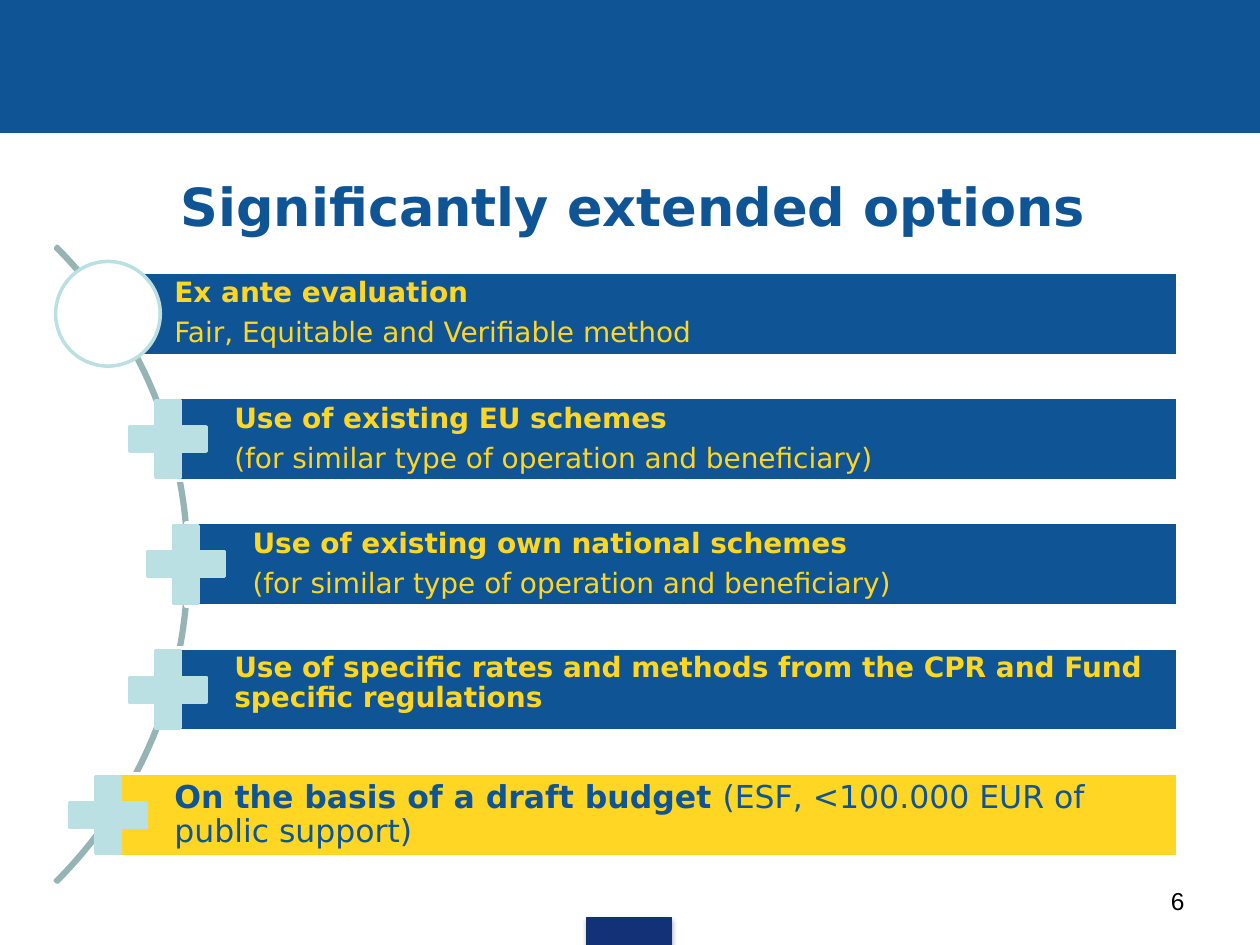
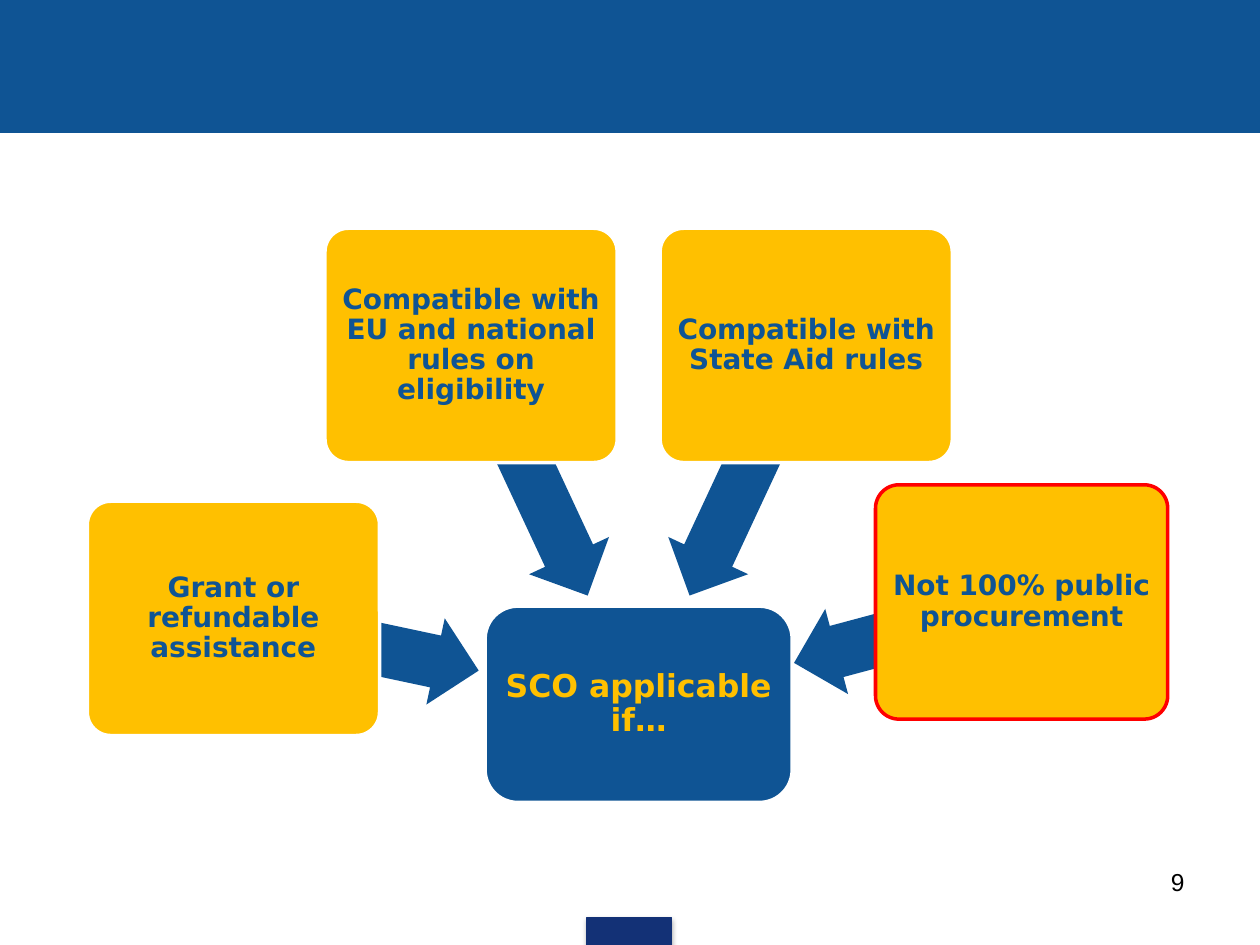
import math
from dataclasses import dataclass

import lxml.etree
import pptx
import pptx.dml.color
import pptx.enum.shapes
import pptx.enum.text
import pptx.oxml.ns
import pptx.util

Pt = pptx.util.Pt
Kind = pptx.enum.shapes.MSO_SHAPE
Align = pptx.enum.text.PP_ALIGN
Anchor = pptx.enum.text.MSO_ANCHOR


@dataclass(frozen=True)
class Theme:
    blue: str = "0F5494"
    navy: str = "133176"
    yellow: str = "FFD624"
    amber: str = "FFC000"
    red: str = "FF0000"
    pale: str = "BBE0E3"
    arc: str = "96B3B6"
    white: str = "FFFFFF"
    black: str = "000000"
    font: str = "DejaVu Sans"
    number_font: str = "Arial"
    title_size: int = 30
    large_size: int = 18
    body_size: int = 16
    number_size: int = 14
    outline: float = 2
    thin_outline: float = 0.75


THEME = Theme()


def rgb(code):
    return pptx.dml.color.RGBColor.from_string(code)


def add_shape(page, kind, bounds, fill=None, line=None, width=THEME.outline,
              adjustments=(), rotation=0):
    shape = page.shapes.add_shape(kind, *map(Pt, bounds))
    shape.shadow.inherit = False
    shape.rotation = rotation
    for index, value in enumerate(adjustments):
        shape.adjustments[index] = value
    if fill:
        shape.fill.solid()
        shape.fill.fore_color.rgb = rgb(fill)
    else:
        shape.fill.background()
    if line:
        shape.line.color.rgb = rgb(line)
        shape.line.width = Pt(width)
    else:
        shape.line.fill.background()
    return shape


def add_drop_shadow(shape):
    tag = pptx.oxml.ns.qn
    effects = shape._element.spPr.find(tag("a:effectLst"))
    shadow = lxml.etree.SubElement(
        effects, tag("a:outerShdw"), blurRad=str(Pt(3.1)), dist=str(Pt(1.8)),
        dir="5400000", rotWithShape="0")
    color = lxml.etree.SubElement(shadow, tag("a:srgbClr"), val=THEME.black)
    lxml.etree.SubElement(color, tag("a:alpha"), val="35000")


def write_text(shape, paragraphs, color, size=THEME.body_size, font=THEME.font,
               align=Align.LEFT, anchor=Anchor.MIDDLE,
               insets=(7.2, 3.6, 7.2, 3.6), tight=False):
    """Fill a shape with paragraphs, each a list of (text, bold) spans."""
    frame = shape.text_frame
    frame.word_wrap = True
    frame.vertical_anchor = anchor
    (frame.margin_left, frame.margin_top,
     frame.margin_right, frame.margin_bottom) = map(Pt, insets)
    for index, spans in enumerate(paragraphs):
        para = frame.add_paragraph() if index else frame.paragraphs[0]
        para.alignment = align
        if tight:
            para.line_spacing = 0.9
            para.space_after = Pt(size * 0.35)
        for text, bold in spans:
            span = para.add_run()
            span.text = text
            span.font.name = font
            span.font.size = Pt(size)
            span.font.bold = bold
            span.font.color.rgb = rgb(color)


def add_text_box(page, bounds, text, color, bold=False, **text_format):
    box = page.shapes.add_textbox(*map(Pt, bounds))
    write_text(box, [[(text, bold)]], color, **text_format)


def add_page(deck, number, number_top):
    """Add a slide with the top band, the bottom tab and the page number."""
    page = deck.slides.add_slide(deck.slide_layouts[6])
    add_shape(page, Kind.RECTANGLE, (0, 0, 720, 75.6), THEME.blue, THEME.blue,
              THEME.thin_outline)
    tab = add_shape(page, Kind.RECTANGLE, (335.5, 524.2, 48.2, 15.8),
                    THEME.navy, THEME.navy, THEME.thin_outline)
    add_drop_shadow(tab)
    add_text_box(page, (516.2, number_top, 167.8, 37.4), number, THEME.black,
                 size=THEME.number_size, font=THEME.number_font,
                 align=Align.RIGHT, anchor=Anchor.TOP)
    return page


def add_option(page, row, left, paragraphs, marker=Kind.MATH_PLUS,
               fill=THEME.blue, color=THEME.yellow, size=THEME.body_size,
               anchor=Anchor.MIDDLE):
    """Add one bar with its marker centred on the bar's left edge."""
    right, height, marker_size = 673.2, 47.6, 59.8
    top = 155.5 + row * 71.6
    bar = add_shape(page, Kind.RECTANGLE, (left, top, right - left, height),
                    fill, THEME.white)
    write_text(bar, paragraphs, color, size=size, anchor=anchor, tight=True,
               insets=(38, 3, 3, 3))
    marker_fill = THEME.white if marker == Kind.OVAL else THEME.pale
    add_shape(page, marker,
              (left - marker_size / 2, top + (height - marker_size) / 2,
               marker_size, marker_size), marker_fill, THEME.pale)


def add_condition(page, text, center, angle, length, line=THEME.white):
    """Add a condition box and, behind it, an arrow leaving its centre."""
    center_x, center_y = center
    thickness, width, height = 50.4, 167, 133.9
    middle_x = center_x + length / 2 * math.cos(math.radians(angle))
    middle_y = center_y + length / 2 * math.sin(math.radians(angle))
    add_shape(page, Kind.LEFT_ARROW,
              (middle_x - length / 2, middle_y - thickness / 2,
               length, thickness),
              THEME.blue, adjustments=(0.6, 0.5), rotation=angle + 180)
    box = add_shape(page, Kind.ROUNDED_RECTANGLE,
                    (center_x - width / 2, center_y - height / 2,
                     width, height),
                    THEME.amber, line, adjustments=(0.1,))
    write_text(box, [[(text, True)]], THEME.blue, align=Align.CENTER,
               insets=(2.2,) * 4, tight=True)


def build_options_page(deck):
    page = add_page(deck, "6", 502.6)
    add_text_box(page, (23.8, 80.6, 648, 73.4),
                 "Significantly extended options", THEME.blue, bold=True,
                 size=THEME.title_size, align=Align.CENTER,
                 insets=(35.2, 3.6, 7.2, 3.6))
    add_shape(page, Kind.BLOCK_ARC, (-406.1, 65.5, 514.1, 514.1),
              line=THEME.arc, adjustments=(189, 27, 0.003))
    outer, inner, middle = 61.7, 95.9, 106.3
    similar = [("(for similar type of operation and beneficiary)", False)]
    add_option(page, 0, outer,
               [[("Ex ante evaluation", True)],
                [("Fair, Equitable and Verifiable method", False)]],
               marker=Kind.OVAL)
    add_option(page, 1, inner,
               [[("Use of existing EU schemes", True)], similar])
    add_option(page, 2, middle,
               [[("Use of existing own national schemes", True)], similar])
    add_option(page, 3, inner,
               [[("Use of specific rates and methods from the CPR and Fund "
                  "specific regulations", True)]], anchor=Anchor.TOP)
    add_option(page, 4, outer,
               [[("On the basis of a draft budget ", True),
                 ("(ESF, <100.000 EUR of public support)", False)]],
               fill=THEME.yellow, color=THEME.blue, size=THEME.large_size)


def build_conditions_page(deck):
    page = add_page(deck, "9", 491.8)
    hub = add_shape(page, Kind.ROUNDED_RECTANGLE, (277.2, 346.4, 175.5, 112.2),
                    THEME.blue, THEME.white)
    write_text(hub, [[("SCO applicable if…", True)]], THEME.amber,
               size=THEME.large_size, align=Align.CENTER, insets=(0.8,) * 4,
               tight=True)
    add_condition(page, "Grant or refundable assistance",
                  (133.4, 353.4), 12, 143.3)
    add_condition(page, "Compatible with EU and national rules on eligibility",
                  (269.2, 197.4), 65, 157.7)
    add_condition(page, "Compatible with State Aid rules",
                  (460.7, 197.4), 115, 157.7)
    add_condition(page, "Not 100% public procurement",
                  (583.8, 344), 165, 134.6, line=THEME.red)


def main():
    deck = pptx.Presentation()
    deck.slide_width, deck.slide_height = Pt(720), Pt(540)
    build_options_page(deck)
    build_conditions_page(deck)
    deck.save("out.pptx")


if __name__ == "__main__":
    main()
